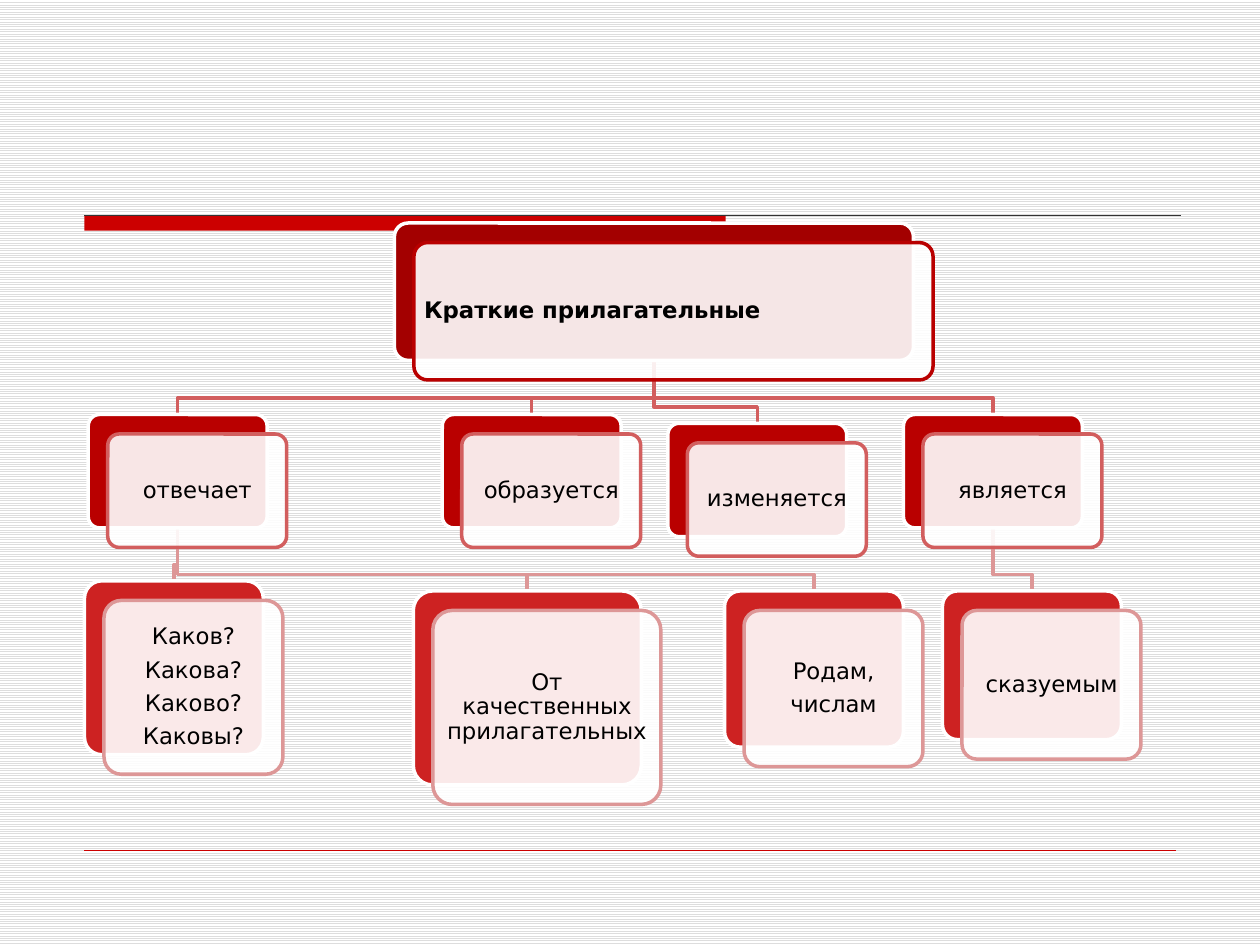
from dataclasses import dataclass

from lxml import etree
from pptx import Presentation
from pptx.dml.color import RGBColor
from pptx.enum import dml, shapes, text
from pptx.oxml import ns
from pptx.util import Inches, Pt

COLORS = {
    "white": "FFFFFF", "stripe": "DDDDDD", "ink": "000000", "rule": "333333",
    "accent": "CC0000", "root": "A30000", "root_edge": "B90000",
    "branch": "B90000", "branch_edge": "D25E5E",
    "leaf": "CD2222", "leaf_edge": "DD9797",
}
FONT = "DejaVu Sans"
CARD_OFFSET = 0.155
ELBOW_DROP = 0.13


@dataclass
class Box:
    left: float
    top: float
    width: float
    height: float

    @property
    def center(self):
        return self.left + self.width / 2

    @property
    def bottom(self):
        return self.top + self.height

    def shifted(self, offset):
        return Box(self.left + offset, self.top + offset, self.width, self.height)

    def lengths(self):
        return [Inches(n) for n in (self.left, self.top, self.width, self.height)]


NODES = {
    "root": (Box(3.13, 1.77, 4.12, 1.09), "root", ["Краткие прилагательные"]),
    "answers": (Box(0.7, 3.29, 1.42, 0.9), "branch", ["отвечает"]),
    "questions": (Box(0.67, 4.61, 1.42, 1.38), "leaf",
                  ["Каков?", "Какова?", "Каково?", "Каковы?"]),
    "source": (Box(3.28, 4.69, 1.81, 1.54), "leaf", ["От качественных прилагательных"]),
    "categories": (Box(5.75, 4.69, 1.42, 1.24), "leaf", ["Родам,", "числам"]),
    "formed": (Box(3.51, 3.29, 1.42, 0.9), "branch", ["образуется"]),
    "changes": (Box(5.3, 3.36, 1.42, 0.9), "branch", ["изменяется"]),
    "serves": (Box(7.17, 3.29, 1.42, 0.9), "branch", ["является"]),
    "predicate": (Box(7.48, 4.69, 1.42, 1.18), "leaf", ["сказуемым"]),
}
LINKS = [
    ("serves", "predicate"), ("root", "serves"), ("root", "changes"),
    ("root", "formed"), ("answers", "categories"), ("answers", "source"),
    ("answers", "questions"), ("root", "answers"),
]


def rgb(name):
    return RGBColor.from_string(COLORS[name])


def paint(shape, fill, line, width=2):
    shape.shadow.inherit = False
    if fill:
        shape.fill.solid()
        shape.fill.fore_color.rgb = rgb(fill)
    else:
        shape.fill.background()
    if line:
        shape.line.color.rgb = rgb(line)
        shape.line.width = Pt(width)
    else:
        shape.line.fill.background()


def add_rule(page, left, right, top, color, width):
    rule = page.shapes.add_connector(
        shapes.MSO_CONNECTOR.STRAIGHT,
        Inches(left), Inches(top), Inches(right), Inches(top))
    rule.line.color.rgb = rgb(color)
    rule.line.width = Pt(width)
    etree.SubElement(rule._element.spPr, ns.qn("a:effectLst"))


def add_frame(page, box):
    fill = page.background.fill
    fill.patterned()
    fill.pattern = dml.MSO_PATTERN.LIGHT_HORIZONTAL
    fill.fore_color.rgb = rgb("stripe")
    fill.back_color.rgb = rgb("white")
    bar = page.shapes.add_shape(
        shapes.MSO_SHAPE.RECTANGLE, *Box(box.left, box.top, 5.09, 0.12).lengths())
    paint(bar, "accent", None)
    right = box.left + box.width
    add_rule(page, box.left, right, box.top, "rule", 0.75)
    add_rule(page, box.left, right - 0.04, box.bottom, "accent", 0.25)


def add_link(page, parent, child, color):
    turn = child.top - ELBOW_DROP
    points = [(parent.center, parent.bottom), (parent.center, turn),
              (child.center, turn), (child.center, child.top)]
    start, *rest = [(Inches(x), Inches(y)) for x, y in points]
    builder = page.shapes.build_freeform(*start)
    builder.add_line_segments(rest, close=False)
    paint(builder.convert_to_shape(), None, color)


def add_card(page, box, fill, line):
    card = page.shapes.add_shape(shapes.MSO_SHAPE.ROUNDED_RECTANGLE, *box.lengths())
    card.adjustments[0] = 0.1
    paint(card, fill, line)
    return card


def add_node(page, box, level, lines):
    add_card(page, box, level, "white")
    card = add_card(page, box.shifted(CARD_OFFSET), "white", f"{level}_edge")
    color = card._element.spPr.find(ns.qn("a:solidFill"))[0]
    etree.SubElement(color, ns.qn("a:alpha"), val="90000")
    frame = card.text_frame
    frame.word_wrap = True
    frame.vertical_anchor = text.MSO_ANCHOR.MIDDLE
    frame.margin_left = frame.margin_right = Inches(0.05)
    frame.margin_top = frame.margin_bottom = Inches(0.05)
    is_root = level == "root"
    for index, line in enumerate(lines):
        para = frame.add_paragraph() if index else frame.paragraphs[0]
        para.alignment = text.PP_ALIGN.LEFT if is_root else text.PP_ALIGN.CENTER
        para.line_spacing = 0.9
        para.space_after = Pt(5)
        span = para.add_run()
        span.text = line
        span.font.name = FONT
        span.font.size = Pt(13)
        span.font.bold = is_root
        span.font.color.rgb = rgb("ink")


def add_tree(page):
    for parent, child in LINKS:
        box, level, _ = NODES[child]
        add_link(page, NODES[parent][0], box, f"{level}_edge")
    for node in NODES.values():
        add_node(page, *node)


def main():
    deck = Presentation()
    deck.slide_width = Inches(10)
    deck.slide_height = Inches(7.5)
    page = deck.slides.add_slide(deck.slide_layouts[6])
    add_frame(page, Box(0.67, 1.71, 8.7, 5.04))
    add_tree(page)
    deck.save("out.pptx")


if __name__ == "__main__":
    main()
